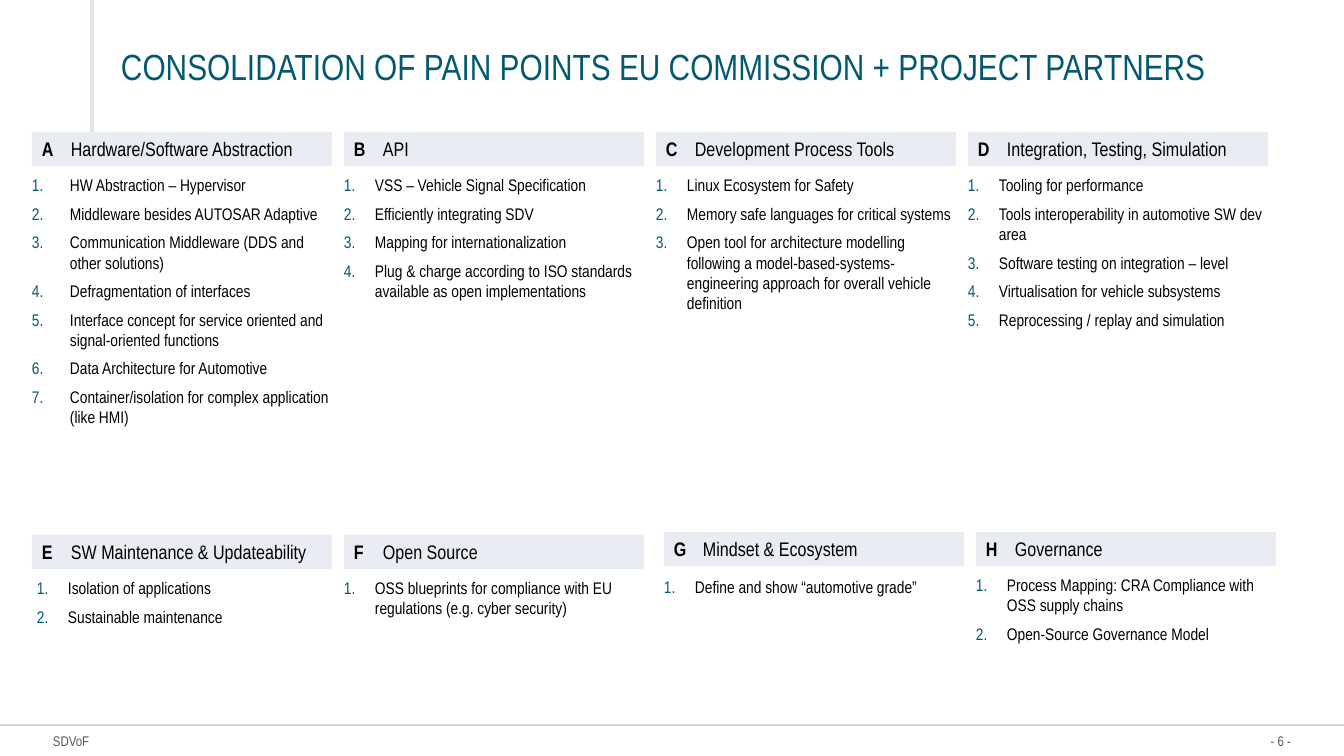
"""Build the slide that groups the project pain points into eight lettered topics."""
from typing import NamedTuple

from lxml.etree import SubElement
from pptx import Presentation
from pptx.dml.color import RGBColor
from pptx.enum.shapes import MSO_CONNECTOR, MSO_SHAPE
from pptx.enum.text import MSO_ANCHOR, MSO_AUTO_SIZE, PP_ALIGN
from pptx.oxml.ns import qn
from pptx.util import Emu, Pt


class Theme(NamedTuple):
    font: str = "Arial Narrow"
    accent: str = "035970"
    text: str = "000000"
    footer: str = "595959"
    header_fill: str = "E9ECF2"
    side_line: str = "DEE5EC"
    title_size: int = 26
    header_size: int = 14
    list_size: int = 12
    footer_size: int = 10


theme = Theme()
PX = 914400 / 100.8


def px(length):
    return Emu(round(length * PX))


def style(font, size, color, bold=False):
    for name, value in {"name": theme.font, "size": Pt(size), "bold": bold}.items():
        setattr(font, name, value)
    font.color.rgb = RGBColor.from_string(color)


presentation = Presentation()
presentation.slide_width, presentation.slide_height = px(1344), px(756)
slide = presentation.slides.add_slide(presentation.slide_layouts[5])
shapes = slide.shapes

rules = [
    ((0, 725, 1344, 725), theme.text, 1, 25),
    ((92, 0, 92, 141), theme.side_line, 2.25, 100),
]
for ends, color, width, opacity in rules:
    line = shapes.add_connector(MSO_CONNECTOR.STRAIGHT, *map(px, ends))
    line.line.color.rgb = RGBColor.from_string(color)
    line.line.width = Pt(width)
    if opacity < 100:
        fill_color = next(line.line._ln.iter(qn("a:srgbClr")))
        SubElement(fill_color, qn("a:alpha"), val=str(opacity * 1000))
    SubElement(line._element.spPr, qn("a:effectLst"))

title = shapes.title
title.left, title.top, title.width, title.height = map(px, (111, 4, 1159, 84))
title_format = {
    "text": "CONSOLIDATION OF PAIN POINTS EU COMMISSION + PROJECT PARTNERS",
    "word_wrap": True,
    "auto_size": MSO_AUTO_SIZE.NONE,
    "vertical_anchor": MSO_ANCHOR.BOTTOM,
    "margin_left": px(10),
    "margin_top": px(5),
    "margin_right": px(10),
    "margin_bottom": 0,
}
for name, value in title_format.items():
    setattr(title.text_frame, name, value)
title_paragraph = title.text_frame.paragraphs[0]
title_paragraph.alignment = PP_ALIGN.LEFT
style(title_paragraph.runs[0].font, theme.title_size, theme.accent)

no_margins = dict.fromkeys(("margin_left", "margin_top", "margin_right", "margin_bottom"), 0)
footers = [
    ("- 6 -", (1250, 732, 41, 17), PP_ALIGN.RIGHT),
    ("SDVoF", (53, 732, 38, 17), PP_ALIGN.LEFT),
]
for text, place, alignment in footers:
    frame = shapes.add_textbox(*map(px, place)).text_frame
    footer_format = {
        **no_margins,
        "text": text,
        "word_wrap": False,
        "auto_size": MSO_AUTO_SIZE.SHAPE_TO_FIT_TEXT,
        "vertical_anchor": MSO_ANCHOR.MIDDLE,
    }
    for name, value in footer_format.items():
        setattr(frame, name, value)
    frame.paragraphs[0].alignment = alignment
    style(frame.paragraphs[0].runs[0].font, theme.footer_size, theme.footer)

topics = [
    ("A", "Hardware/Software Abstraction", (32, 132), (32, 175, 275), 38, [
        "HW Abstraction – Hypervisor",
        "Middleware besides AUTOSAR Adaptive",
        "Communication Middleware (DDS and other solutions)",
        "Defragmentation of interfaces",
        "Interface concept for service oriented and signal-oriented functions",
        "Data Architecture for Automotive",
        "Container/isolation for complex application (like HMI)",
    ]),
    ("B", "API", (344, 132), (344, 175, 147), 31, [
        "VSS – Vehicle Signal Specification",
        "Efficiently integrating SDV",
        "Mapping for internationalization",
        "Plug & charge according to ISO standards available as open implementations",
    ]),
    ("C", "Development Process Tools", (656, 132), (656, 175, 159), 31, [
        "Linux Ecosystem for Safety",
        "Memory safe languages for critical systems",
        "Open tool for architecture modelling following a model-based-systems-engineering "
        "approach for overall vehicle definition",
    ]),
    ("D", "Integration, Testing, Simulation", (968, 132), (968, 175, 156), 31, [
        "Tooling for performance",
        "Tools interoperability in automotive SW dev area",
        "Software testing on integration – level",
        "Virtualisation for vehicle subsystems",
        "Reprocessing / replay and simulation",
    ]),
    ("E", "SW Maintenance & Updateability", (32, 535), (37, 578, 49), 31, [
        "Isolation of applications",
        "Sustainable maintenance",
    ]),
    ("F", "Open Source", (344, 535), (344, 578, 40), 31, [
        "OSS blueprints for compliance with EU regulations (e.g. cyber security)",
    ]),
    ("G", "Mindset & Ecosystem", (664, 532), (664, 577, 20), 31, [
        "Define and show “automotive grade”",
    ]),
    ("H", "Governance", (976, 532), (976, 575, 70), 31, [
        "Process Mapping: CRA Compliance with OSS supply chains",
        "Open-Source Governance Model",
    ]),
]
TOPIC_WIDTH, HEADER_HEIGHT, LABEL_TAB = 300, 34, 29

for letter, label, header_place, (left, top, height), indent, points in topics:
    header = shapes.add_shape(
        MSO_SHAPE.RECTANGLE, *map(px, (*header_place, TOPIC_WIDTH, HEADER_HEIGHT)))
    header.shadow.inherit = False
    header.fill.solid()
    header.fill.fore_color.rgb = RGBColor.from_string(theme.header_fill)
    header.line.fill.background()
    header.text_frame.vertical_anchor = MSO_ANCHOR.MIDDLE
    paragraph = header.text_frame.paragraphs[0]
    paragraph.alignment = PP_ALIGN.LEFT
    tabs = SubElement(paragraph._p.get_or_add_pPr(), qn("a:tabLst"))
    SubElement(tabs, qn("a:tab"), pos=str(px(LABEL_TAB)), algn="l")
    for text, bold in ((letter, True), ("\t" + label, False)):
        run = paragraph.add_run()
        run.text = text
        style(run.font, theme.header_size, theme.text, bold)

    frame = shapes.add_textbox(*map(px, (left, top, TOPIC_WIDTH, height))).text_frame
    list_format = {
        **no_margins,
        "text": "\n".join(points),
        "word_wrap": True,
        "auto_size": MSO_AUTO_SIZE.SHAPE_TO_FIT_TEXT,
    }
    for name, value in list_format.items():
        setattr(frame, name, value)
    for paragraph in frame.paragraphs:
        paragraph.space_after = Pt(6)
        properties = paragraph._p.get_or_add_pPr()
        properties.set("marL", str(px(indent)))
        properties.set("indent", str(-px(indent)))
        bullet_color = SubElement(properties, qn("a:buClr"))
        SubElement(bullet_color, qn("a:srgbClr"), val=theme.accent)
        SubElement(properties, qn("a:buFont"), typeface=theme.font)
        SubElement(properties, qn("a:buAutoNum"), type="arabicPeriod")
        style(paragraph.runs[0].font, theme.list_size, theme.text)

presentation.save("out.pptx")
